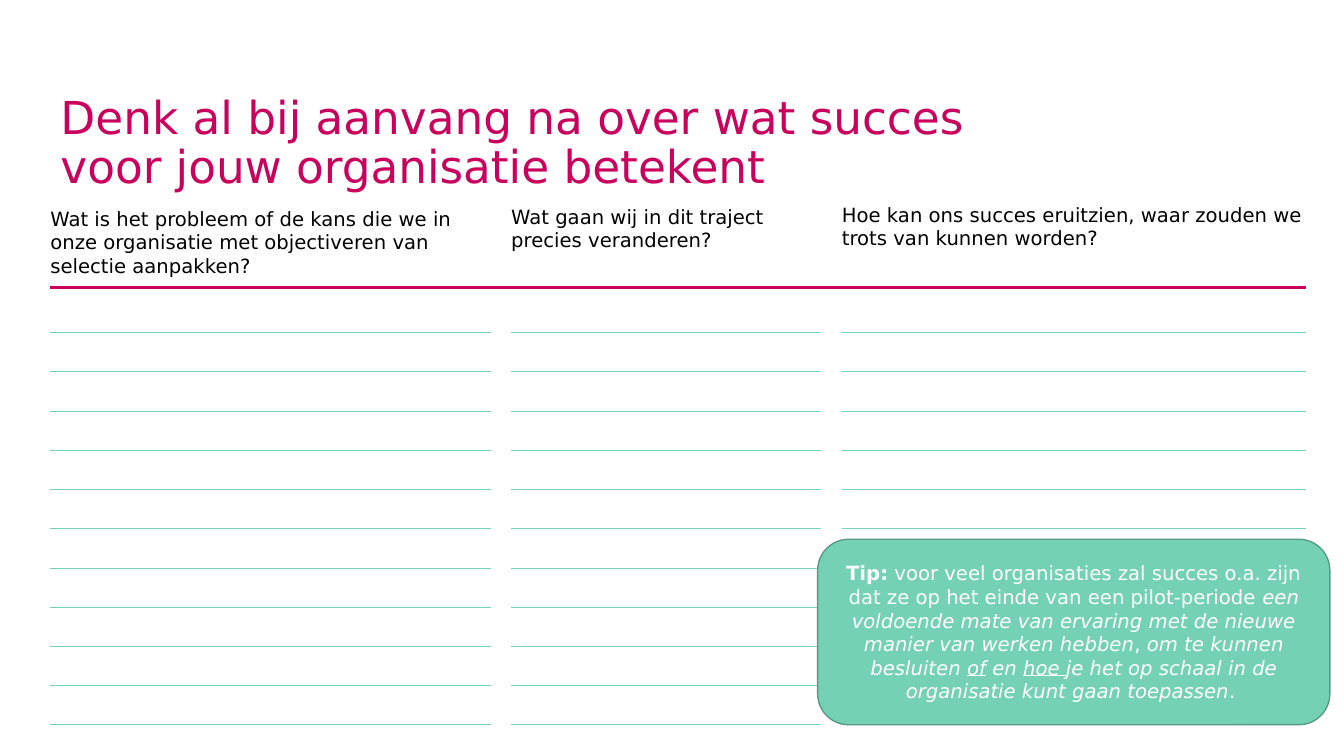
from lxml import etree
from pptx import Presentation
from pptx.dml.color import RGBColor
from pptx.enum.shapes import MSO_CONNECTOR, MSO_SHAPE
from pptx.enum.text import MSO_ANCHOR, MSO_AUTO_SIZE, PP_ALIGN
from pptx.oxml.ns import qn
from pptx.util import Inches, Pt

STRAIGHT = MSO_CONNECTOR.STRAIGHT
ROUNDED = MSO_SHAPE.ROUNDED_RECTANGLE
BOTTOM, MIDDLE = MSO_ANCHOR.BOTTOM, MSO_ANCHOR.MIDDLE
LEFT, CENTER = PP_ALIGN.LEFT, PP_ALIGN.CENTER
NO_AUTOSIZE = MSO_AUTO_SIZE.NONE

MAGENTA = RGBColor(0xCA, 0x00, 0x5D)
MINT = RGBColor(0x75, 0xD1, 0xB5)
DARK_MINT = RGBColor(0x57, 0x9B, 0x86)
BLACK = RGBColor(0x00, 0x00, 0x00)
WHITE = RGBColor(0xFF, 0xFF, 0xFF)
FONT = "DejaVu Sans"

TITLE = "Denk al bij aanvang na over wat succes \vvoor jouw organisatie betekent"
ALL_ROWS = range(11)
COLUMNS = [
    {"question": "Wat is het probleem of de kans die we in onze organisatie "
                 "met objectiveren van selectie aanpakken?",
     "box": (0.5, 2.05, 4.26, 0.72), "right": 4.87, "rows": ALL_ROWS},
    {"question": "Wat gaan wij in dit traject precies veranderen?",
     "box": (5.07, 2.03, 2.9, 0.47), "right": 8.14, "rows": ALL_ROWS},
    {"question": "Hoe kan ons succes eruitzien, waar zouden we trots van kunnen worden?",
     "box": (8.35, 2.01, 4.61, 0.48), "right": 12.95, "rows": [0, 1, 2, 3, 4, 5, 10]},
]
TIP = [
    ("Tip:", "bold"),
    (" voor veel organisaties zal succes o.a. zijn dat ze op het einde "
     "van een pilot-periode ", ""),
    ("een voldoende mate van ervaring met de nieuwe manier van werken hebben", "italic"),
    (", ", ""),
    ("om te kunnen besluiten ", "italic"),
    ("of", "italic underline"),
    (" en ", "italic"),
    ("hoe ", "italic underline"),
    ("je het op schaal in de organisatie kunt gaan toepassen", "italic"),
    (". ", ""),
]
FIRST_ROW, LAST_ROW = 3.3, 7.19
ROW_STEP = (LAST_ROW - FIRST_ROW) / (len(ALL_ROWS) - 1)


def set_font(font, size, color):
    font.name, font.size = FONT, Pt(size)
    font.color.rgb = color


def add_rule(slide, left, right, top, color, width):
    rule = slide.shapes.add_connector(
        STRAIGHT, Inches(left), Inches(top), Inches(right), Inches(top))
    rule.line.color.rgb = color
    rule.line.width = Pt(width)
    etree.SubElement(rule._element.spPr, qn("a:effectLst"))


def add_title(slide):
    title = slide.shapes.title
    title.left, title.top = Inches(0.5), Inches(0.93)
    title.width, title.height = Inches(11.95), Inches(1.04)
    frame = title.text_frame
    frame.text = TITLE
    frame.auto_size = NO_AUTOSIZE
    frame.vertical_anchor = BOTTOM
    paragraph = frame.paragraphs[0]
    paragraph.alignment = LEFT
    paragraph.line_spacing = 0.9
    set_font(paragraph.font, 32.4, MAGENTA)


def add_column(slide, column):
    box = slide.shapes.add_textbox(*map(Inches, column["box"]))
    frame = box.text_frame
    frame.word_wrap = True
    frame.margin_left = frame.margin_right = frame.margin_top = frame.margin_bottom = 0
    frame.text = column["question"]
    set_font(frame.paragraphs[0].font, 14, BLACK)
    for row in column["rows"]:
        add_rule(slide, column["box"][0], column["right"],
                 FIRST_ROW + row * ROW_STEP, MINT, 0.5)


def add_tip(slide):
    tip = slide.shapes.add_shape(
        ROUNDED, Inches(8.11), Inches(5.35), Inches(5.08), Inches(1.84))
    tip.shadow.inherit = False
    tip.fill.solid()
    tip.fill.fore_color.rgb = MINT
    tip.line.color.rgb = DARK_MINT
    tip.line.width = Pt(1)
    frame = tip.text_frame
    frame.word_wrap = True
    frame.vertical_anchor = MIDDLE
    paragraph = frame.paragraphs[0]
    paragraph.alignment = CENTER
    set_font(paragraph.font, 14, WHITE)
    for text, style in TIP:
        run = paragraph.add_run()
        run.text = text
        for attribute in style.split():
            setattr(run.font, attribute, True)


def main():
    """Build the worksheet slide about what success means."""
    presentation = Presentation()
    presentation.slide_width, presentation.slide_height = Inches(13.33), Inches(7.5)
    slide = presentation.slides.add_slide(presentation.slide_layouts[5])
    add_title(slide)
    add_rule(slide, COLUMNS[0]["box"][0], COLUMNS[-1]["right"], 2.85, MAGENTA, 2.25)
    for column in COLUMNS:
        add_column(slide, column)
    add_tip(slide)
    presentation.save("out.pptx")


if __name__ == "__main__":
    main()
